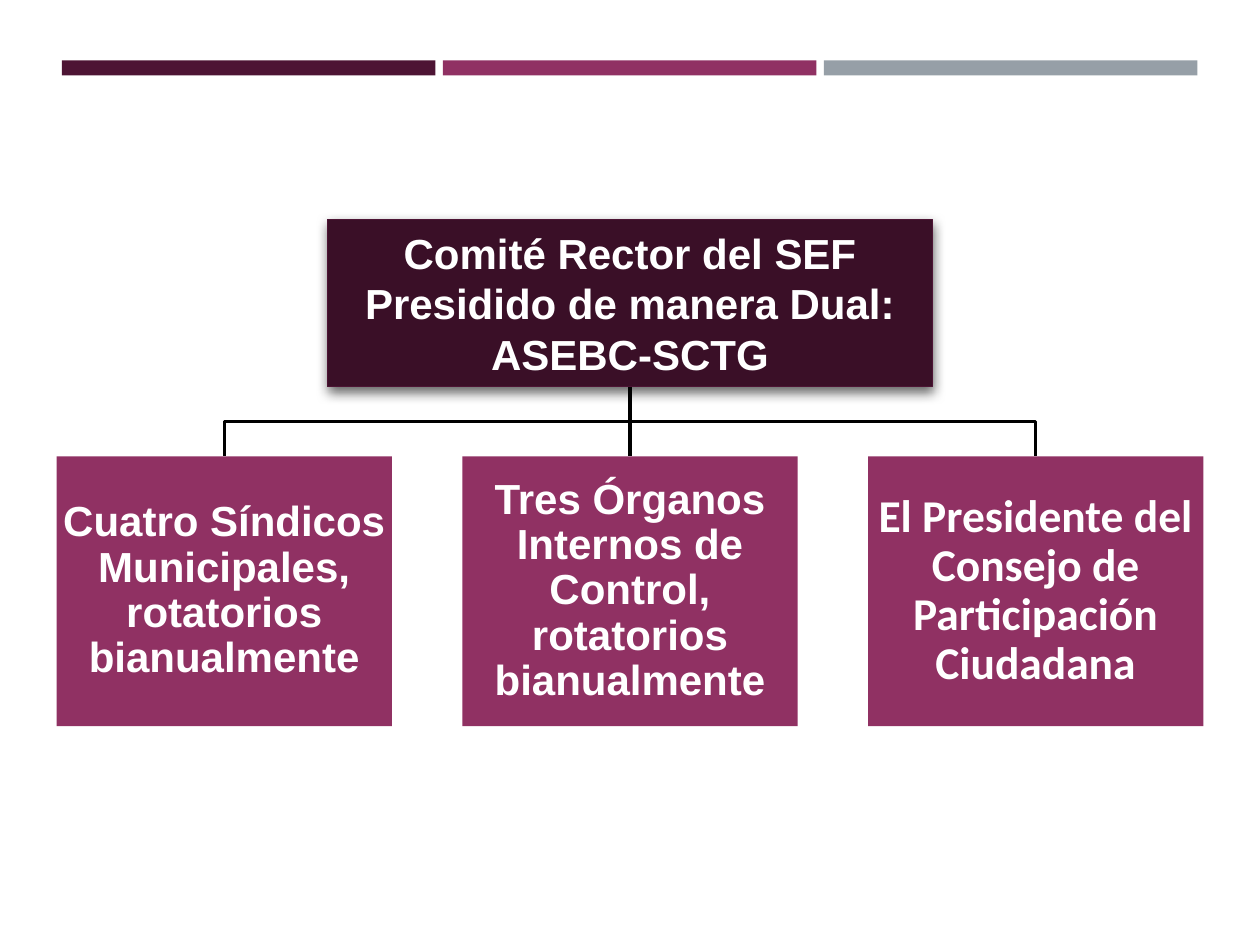
from lxml import etree
from pptx import Presentation
from pptx.dml.color import RGBColor
from pptx.enum.shapes import MSO_CONNECTOR, MSO_SHAPE
from pptx.enum.text import MSO_ANCHOR, PP_ALIGN
from pptx.oxml.ns import qn
from pptx.util import Cm, Pt

RECTANGLE = MSO_SHAPE.RECTANGLE
STRAIGHT = MSO_CONNECTOR.STRAIGHT
MIDDLE = MSO_ANCHOR.MIDDLE
CENTER = PP_ALIGN.CENTER
BOTTOM_SIDE, TOP_SIDE = 2, 0

THEME = {
    "dark": RGBColor(0x4D, 0x14, 0x34),
    "root": RGBColor(0x3A, 0x0F, 0x27),
    "accent": RGBColor(0x90, 0x31, 0x63),
    "gray": RGBColor(0x96, 0x9F, 0xA7),
    "line": RGBColor(0, 0, 0),
    "text": RGBColor(0xFF, 0xFF, 0xFF),
    "size": Pt(24),
    "large_size": Pt(26),
    "line_width": Pt(1.75),
    "border_width": Pt(0.75),
}
FRAME_FORMAT = {
    "word_wrap": True,
    "vertical_anchor": MIDDLE,
    "margin_left": Cm(0.05),
    "margin_right": Cm(0.05),
    "margin_top": Cm(0.05),
    "margin_bottom": Cm(0.05),
}


def add_rectangle(left, top, width, height, color):
    shape = slide.shapes.add_shape(RECTANGLE, Cm(left), Cm(top), Cm(width), Cm(height))
    shape.shadow.inherit = False
    shape.fill.solid()
    shape.fill.fore_color.rgb = color
    shape.line.fill.background()
    return shape


def write_text(shape, lines, font_name, size, spacing):
    for name, value in FRAME_FORMAT.items():
        setattr(shape.text_frame, name, value)
    shape.text_frame.text = "\n".join(lines)
    for paragraph in shape.text_frame.paragraphs:
        paragraph.alignment = CENTER
        paragraph.line_spacing = spacing
        font = paragraph.runs[0].font
        for name, value in {"name": font_name, "size": size, "bold": True}.items():
            setattr(font, name, value)
        font.color.rgb = THEME["text"]


presentation = Presentation()
presentation.slide_width = Cm(25.4)
presentation.slide_height = Cm(19.05)
slide = presentation.slides.add_slide(presentation.slide_layouts[6])

for column, color in enumerate(("dark", "accent", "gray")):
    add_rectangle(1.25 + column * 7.68, 1.22, 7.53, 0.3, THEME[color])

center, root_bottom, branch_top = 12.7, 7.8, 9.2
branch_pitch, branch_width, branch_height = 8.18, 6.76, 5.44
root_width, root_height = 12.2, 3.38
bend = (root_bottom + branch_top) / 2

for direction in (1, -1):
    branch_center = center + direction * branch_pitch
    builder = slide.shapes.build_freeform(Cm(center), Cm(root_bottom))
    corners = ((center, bend), (branch_center, bend), (branch_center, branch_top))
    builder.add_line_segments([(Cm(x), Cm(y)) for x, y in corners], close=False)
    elbow = builder.convert_to_shape()
    elbow.shadow.inherit = False
    elbow.fill.background()
    elbow.line.color.rgb = THEME["line"]
    elbow.line.width = THEME["line_width"]

root = add_rectangle(center - root_width / 2, root_bottom - root_height,
                     root_width, root_height, THEME["root"])
root.line.color.rgb = THEME["dark"]
root.line.width = THEME["border_width"]
effects = root._element.spPr.find(qn("a:effectLst"))
shadow = etree.SubElement(effects, qn("a:outerShdw"), blurRad=str(Pt(7)),
                          dist=str(Pt(3)), dir="5040000", rotWithShape="0")
shadow_color = etree.SubElement(shadow, qn("a:srgbClr"), val=str(THEME["line"]))
etree.SubElement(shadow_color, qn("a:alpha"), val="60000")
write_text(root, ("Comité Rector del SEF", "Presidido de manera Dual:", "ASEBC-SCTG"),
           "Arial", THEME["size"], 1.0)

branches = (
    ("Cuatro Síndicos Municipales, rotatorios bianualmente", "Arial", "size"),
    ("Tres Órganos Internos de Control, rotatorios bianualmente", "Arial", "size"),
    ("El Presidente del Consejo de Participación Ciudadana", "Calibri", "large_size"),
)
branch_shapes = []
for column, (text, font_name, size) in enumerate(branches):
    left = center + (column - 1) * branch_pitch - branch_width / 2
    branch = add_rectangle(left, branch_top, branch_width, branch_height, THEME["accent"])
    write_text(branch, (text,), font_name, THEME[size], 0.9)
    branch_shapes.append(branch)

trunk = slide.shapes.add_connector(STRAIGHT, Cm(center), Cm(root_bottom),
                                   Cm(center), Cm(branch_top))
trunk.begin_connect(root, BOTTOM_SIDE)
trunk.end_connect(branch_shapes[1], TOP_SIDE)
trunk.line.color.rgb = THEME["line"]
trunk.line.width = THEME["line_width"]
etree.SubElement(trunk._element.spPr, qn("a:effectLst"))

presentation.save("out.pptx")
